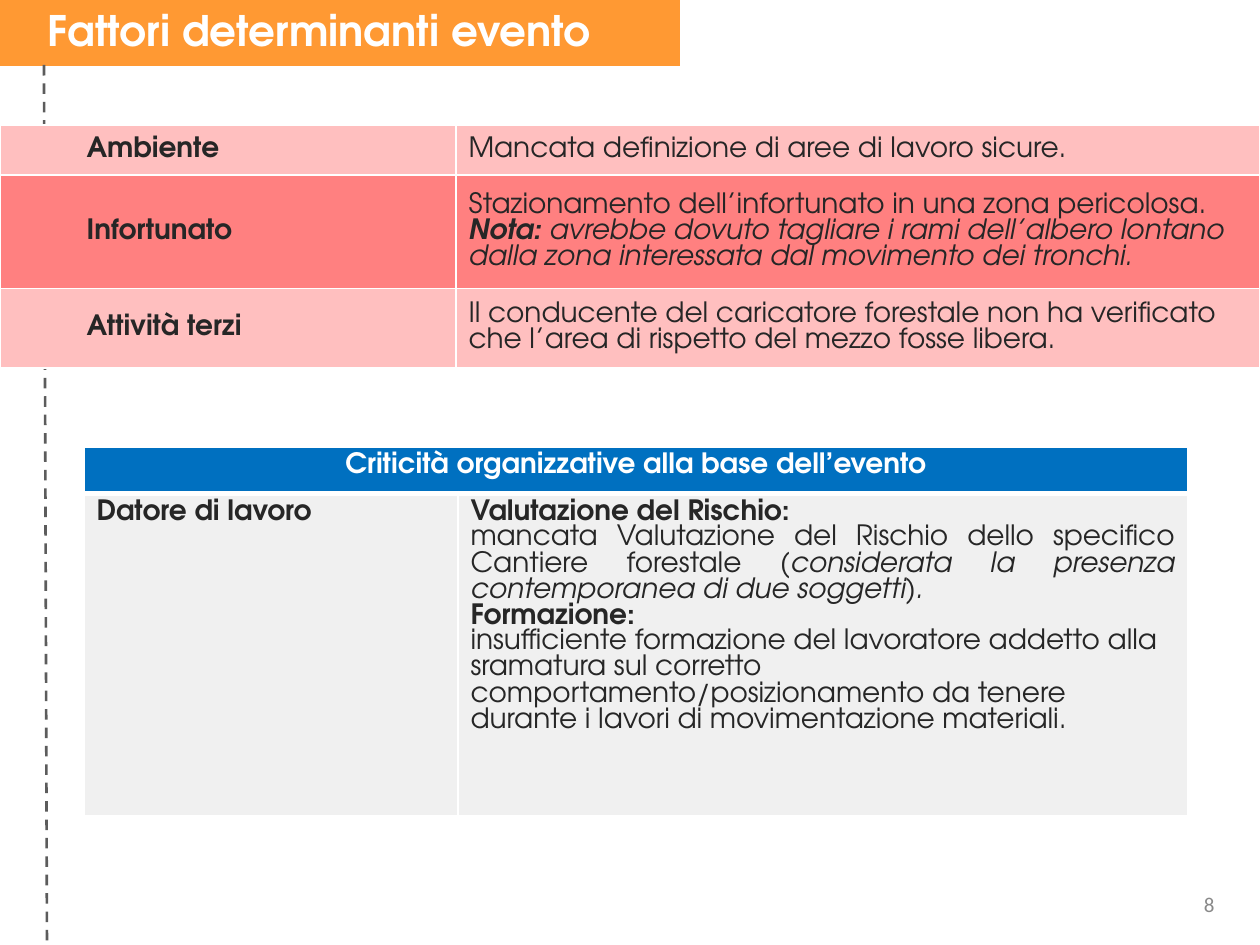
from dataclasses import dataclass

from lxml.etree import SubElement
from pptx import Presentation
from pptx.dml.color import RGBColor
from pptx.enum.dml import MSO_LINE_DASH_STYLE as Dash
from pptx.enum.shapes import MSO_CONNECTOR as Connector, MSO_SHAPE as Shape
from pptx.enum.text import MSO_ANCHOR as Anchor, MSO_AUTO_SIZE as AutoSize, PP_ALIGN as Align
from pptx.oxml.ns import qn
from pptx.util import Pt

EMU_PER_PX = 914400 / 126


def px(length):
    return round(length * EMU_PER_PX)


@dataclass(frozen=True)
class Theme:
    font: str = "TeX Gyre Adventor"
    number_font: str = "Calibri"
    title_size: int = 24
    body_size: int = 16
    number_size: int = 12
    white: str = "FFFFFF"
    text: str = "262626"
    number: str = "898989"
    orange: str = "FF9933"
    dash: str = "5C5C5C"
    pink: str = "FFBFBF"
    red: str = "FF8080"
    blue: str = "0070C0"
    grey: str = "F0F0F0"


@dataclass
class Cell:
    paragraphs: list  # each paragraph is a list of (text, style), style from "b" and "i"
    fill: str
    color: str = Theme.text
    align: tuple = ()
    anchor: Anchor = Anchor.TOP
    indent: int = 0
    bottom: int = 1


class SlideBuilder:
    def __init__(self, slide, theme):
        self.slide = slide
        self.theme = theme

    def format_run(self, run, size, color, style="", font=None):
        run.font.name = font or self.theme.font
        run.font.size = Pt(size)
        run.font.color.rgb = RGBColor.from_string(color)
        run.font.bold = "b" in style
        run.font.italic = "i" in style

    def bar(self, left, top, width, height, color):
        shape = self.slide.shapes.add_shape(Shape.RECTANGLE, px(left), px(top), px(width), px(height))
        shape.shadow.inherit = False
        shape.fill.solid()
        shape.fill.fore_color.rgb = RGBColor.from_string(color)
        shape.line.fill.background()

    def dashed_line(self, start, end, color, weight):
        line = self.slide.shapes.add_connector(Connector.STRAIGHT, *map(px, start + end))
        line.line.color.rgb = RGBColor.from_string(color)
        line.line.width = Pt(weight)
        line.line.dash_style = Dash.DASH
        SubElement(line.element.spPr, qn("a:effectLst"))

    def title(self, text, left, top, width, height):
        title = self.slide.shapes.title
        title.left, title.top, title.width, title.height = map(px, (left, top, width, height))
        # Bring the title in front of the bar
        title.element.getparent().append(title.element)
        frame = title.text_frame
        frame.text = text
        frame.auto_size = AutoSize.NONE
        frame.vertical_anchor = Anchor.TOP
        frame.paragraphs[0].alignment = Align.LEFT
        self.format_run(frame.paragraphs[0].runs[0], self.theme.title_size, self.theme.white, "b")

    def page_number(self, text, left, top, width, height):
        frame = self.slide.shapes.add_textbox(*map(px, (left, top, width, height))).text_frame
        frame.word_wrap = True
        frame.text = text
        frame.paragraphs[0].alignment = Align.RIGHT
        self.format_run(frame.paragraphs[0].runs[0], self.theme.number_size,
                        self.theme.number, font=self.theme.number_font)

    def table(self, left, top, columns, heights, rows):
        table = self.slide.shapes.add_table(
            len(heights), len(columns), px(left), px(top), px(sum(columns)), px(sum(heights))).table
        table.first_row = table.horz_banding = False
        for column, width in zip(table.columns, columns):
            column.width = px(width)
        for row, height, contents in zip(table.rows, heights, rows):
            row.height = px(height)
            for cell, content in zip(row.cells, contents):
                self.fill_cell(cell, content)
            if len(contents) == 1:
                row.cells[0].merge(row.cells[len(columns) - 1])

    def fill_cell(self, cell, content):
        self.borders(cell, content.bottom)
        cell.fill.solid()
        cell.fill.fore_color.rgb = RGBColor.from_string(content.fill)
        cell.vertical_anchor = content.anchor
        frame = cell.text_frame
        for index, runs in enumerate(content.paragraphs):
            paragraph = frame.add_paragraph() if index else frame.paragraphs[0]
            paragraph.alignment = content.align[index] if content.align else Align.LEFT
            if content.indent:
                paragraph._p.get_or_add_pPr().set("marL", str(px(content.indent)))
            for text, style in runs:
                run = paragraph.add_run()
                run.text = text
                self.format_run(run, self.theme.body_size, content.color, style)

    def borders(self, cell, bottom):
        properties = cell._tc.get_or_add_tcPr()
        for side, weight in (("L", 1), ("R", 1), ("T", 1), ("B", bottom)):
            line = SubElement(properties, qn(f"a:ln{side}"), w=str(Pt(weight)))
            fill = SubElement(line, qn("a:solidFill"))
            SubElement(fill, qn("a:srgbClr"), val=self.theme.white)


def main():
    theme = Theme()
    presentation = Presentation()
    presentation.slide_width, presentation.slide_height = px(1260), px(945)
    title_only = presentation.slide_layouts[5]
    builder = SlideBuilder(presentation.slides.add_slide(title_only), theme)

    # Heading and side line
    builder.bar(-15, 0, 695, 66, theme.orange)
    builder.dashed_line((44, 65), (47, 945), theme.dash, 1.5)
    builder.title("Fattori determinanti evento", 35, -2, 987, 63)
    builder.page_number("8", 1156, 885, 71, 53)

    # Organisational issues
    header = Cell([[("Criticità organizzative alla base dell’evento", "b")]],
                  theme.blue, theme.white, (Align.CENTER,), bottom=3)
    employer = Cell([[("Datore di lavoro", "b")]], theme.grey)
    issues = Cell([
        [("Valutazione del Rischio:", "b")],
        [("mancata Valutazione del Rischio dello specifico Cantiere forestale (", ""),
         ("considerata la presenza contemporanea di due soggetti).", "i")],
        [("Formazione:", "b")],
        [("insufficiente formazione del lavoratore addetto alla sramatura sul corretto "
          "comportamento/posizionamento da tenere durante i lavori di movimentazione materiali.", "")],
    ], theme.grey, align=(Align.LEFT, Align.JUSTIFY, Align.LEFT, Align.LEFT))
    builder.table(84, 447, (374, 730), (46, 323), [[header], [employer, issues]])

    # Determining factors
    factors = [
        ("Ambiente", theme.pink, [[("Mancata definizione di aree di lavoro sicure.", "")]]),
        ("Infortunato", theme.red, [
            [("Stazionamento dell’infortunato in una zona pericolosa.", "")],
            [("Nota: ", "bi"),
             ("avrebbe dovuto tagliare i rami dell’albero lontano dalla zona "
              "interessata dal movimento dei tronchi.", "i")]]),
        ("Attività terzi", theme.pink, [
            [("Il conducente del caricatore forestale non ha verificato che l’area "
              "di rispetto del mezzo fosse libera.", "")]]),
    ]
    rows = [[Cell([[(name, "b")]], fill, anchor=Anchor.MIDDLE, indent=74),
             Cell(paragraphs, fill, anchor=Anchor.MIDDLE)]
            for name, fill, paragraphs in factors]
    builder.table(0, 125, (456, 804), (50, 113, 79), rows)

    presentation.save("out.pptx")


if __name__ == "__main__":
    main()
